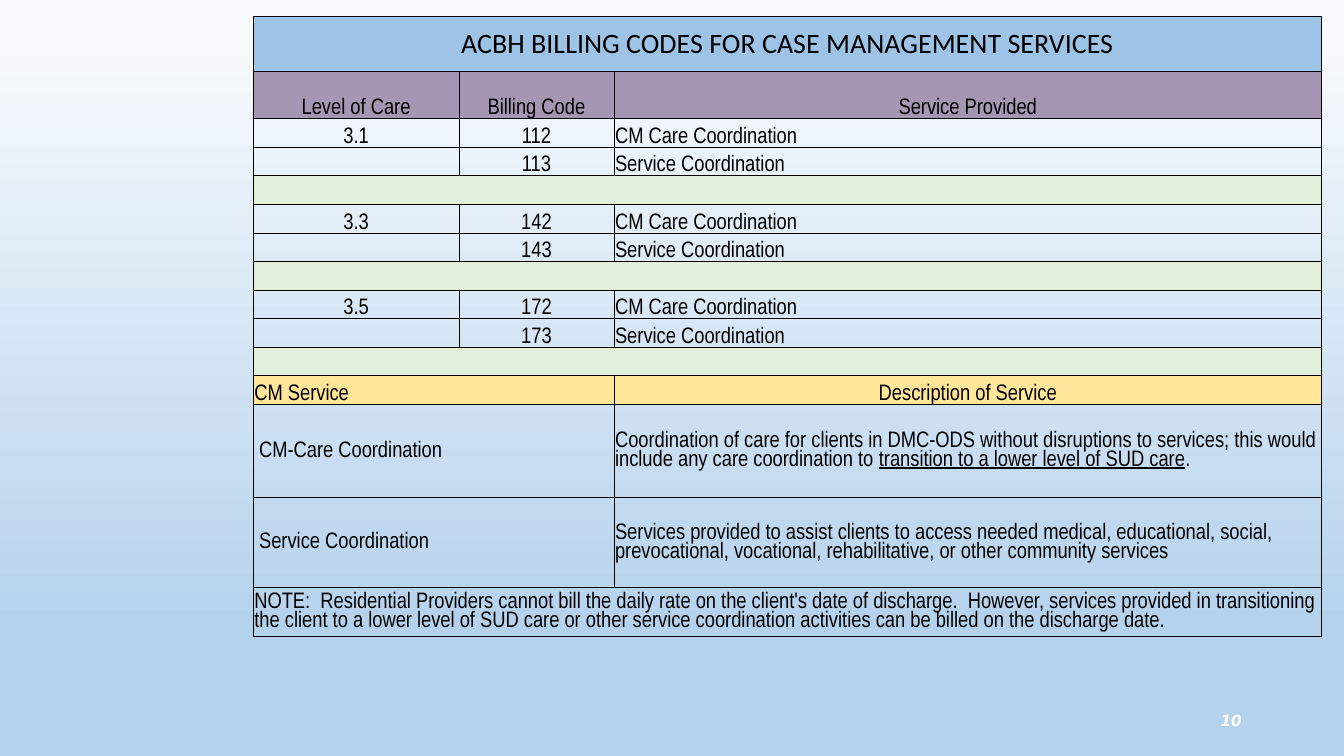
"""Build the slide of billing codes for case management services."""
from lxml.etree import SubElement
from pptx import Presentation
from pptx.dml.color import RGBColor
from pptx.enum.text import MSO_ANCHOR, PP_ALIGN
from pptx.oxml.ns import qn
from pptx.util import Cm, Pt

COLORS = {
    "black": "000000", "white": "FFFFFF", "title": "9DC3E6", "header": "A596B4",
    "spacer": "E2EFDA", "service": "FFE699",
    "sky_top": "F7FAFD", "sky_low": "B5D2EC", "sky_end": "CEE1F2",
}
BODY = {"name": "Arial Narrow", "size": Pt(16)}
TITLE = {"name": "Calibri", "size": Pt(20)}
NUMBER = {"name": "DejaVu Sans", "size": Pt(11), "bold": True, "italic": True}
CENTER, LEFT, RIGHT = PP_ALIGN.CENTER, PP_ALIGN.LEFT, PP_ALIGN.RIGHT
MIDDLE, BOTTOM = MSO_ANCHOR.MIDDLE, MSO_ANCHOR.BOTTOM
NO_GRID_STYLE = "{2D5ABB26-0587-4C30-8999-92F81FD0307C}"

COLUMN_WIDTHS = [5.19, 3.9, 4.5, 3.99, 9.35]
ROW_HEIGHTS = [1.4, 1.18] + [0.72] * 10 + [2.34, 2.27, 1.11]
THICK_LINES = {0, 1, 2, 11, 12, 14, 15}
LEVELS = [("3.1", "112", "113"), ("3.3", "142", "143"), ("3.5", "172", "173")]


def entry(text, span=1, align=LEFT, anchor=BOTTOM, fill=None, font=BODY, indent=0.03):
    """Describe one table cell."""
    runs = [text] if isinstance(text, str) else text
    return {"runs": runs, "span": span, "align": align, "anchor": anchor,
            "fill": fill, "font": font, "indent": indent}


def billing_rows():
    """Return the table's rows as lists of cell descriptions."""
    rows = [
        [entry("ACBH BILLING CODES FOR CASE MANAGEMENT SERVICES", 5, CENTER, MIDDLE,
               "title", TITLE)],
        [entry("Level of Care", 1, CENTER, fill="header"),
         entry("Billing Code", 1, CENTER, fill="header"),
         entry("Service Provided", 3, CENTER, fill="header")],
    ]
    for level, care_code, service_code in LEVELS:
        rows += [
            [entry(level, 1, CENTER), entry(care_code, 1, CENTER),
             entry("CM Care Coordination", 3)],
            [entry(""), entry(service_code, 1, CENTER), entry("Service Coordination", 3)],
            [entry("", fill="spacer") for _ in COLUMN_WIDTHS],
        ]
    return rows + [
        [entry("CM Service", fill="service"), entry("", fill="service"),
         entry("Description of Service", 3, CENTER, fill="service")],
        [entry("CM-Care Coordination", 2, anchor=MIDDLE, indent=0.15),
         entry(["Coordination of care for clients in DMC-ODS without disruptions to "
                "services; this would include any care coordination to ",
                "transition to a lower level of SUD care", "."], 3, anchor=MIDDLE)],
        [entry("Service Coordination", 2, anchor=MIDDLE, indent=0.15),
         entry("Services provided to assist clients to access needed medical, educational, "
               "social, prevocational, vocational, rehabilitative, or other community "
               "services", 3, anchor=MIDDLE)],
        [entry("NOTE:  Residential Providers cannot bill the daily rate on the client's date "
               "of discharge.  However, services provided in transitioning the client to a "
               "lower level of SUD care or other service coordination activities can be "
               "billed on the discharge date.", 5, anchor=MIDDLE)],
    ]


class SlideBuilder:
    """Hold the style and the current slide."""

    def __init__(self, presentation, colors):
        """Add a blank slide to the presentation."""
        self.colors = colors
        self.slide = presentation.slides.add_slide(presentation.slide_layouts[6])

    def color(self, name):
        """Return a named colour."""
        return RGBColor.from_string(self.colors[name])

    def background(self, stops):
        """Fill the background with a vertical gradient."""
        fill = self.slide.background.fill
        fill.gradient()
        fill.gradient_angle = 270
        stop_list = self.slide.background._cSld.find(".//" + qn("a:gsLst"))
        stop_list.clear()
        for percent, name in stops:
            stop = SubElement(stop_list, qn("a:gs"), pos=str(percent * 1000))
            SubElement(stop, qn("a:srgbClr"), val=self.colors[name])

    def run(self, paragraph, text, font, color):
        """Add a formatted run and return it."""
        run = paragraph.add_run()
        run.text = text
        for attribute, value in font.items():
            setattr(run.font, attribute, value)
        run.font.color.rgb = self.color(color)
        return run

    def text(self, text, box, font, color, align):
        """Add a one-line text box."""
        shape = self.slide.shapes.add_textbox(*map(Cm, box))
        frame = shape.text_frame
        frame.word_wrap = True
        frame.vertical_anchor = MIDDLE
        paragraph = frame.paragraphs[0]
        paragraph.alignment = align
        self.run(paragraph, text, font, color)

    def border(self, cell, side, points):
        """Draw one side of a cell."""
        line = SubElement(cell._tc.get_or_add_tcPr(), qn("a:ln" + side), w=str(Pt(points)))
        fill = SubElement(line, qn("a:solidFill"))
        SubElement(fill, qn("a:srgbClr"), val=self.colors["black"])

    def cell(self, cell, content):
        """Fill a cell with its text and colour."""
        formats = {"vertical_anchor": content["anchor"], "margin_left": Cm(content["indent"]),
                   "margin_right": Cm(0.03), "margin_top": Cm(0.03), "margin_bottom": 0}
        for attribute, value in formats.items():
            setattr(cell, attribute, value)
        paragraph = cell.text_frame.paragraphs[0]
        paragraph.alignment = content["align"]
        paragraph.line_spacing = 0.9
        for index, text in enumerate(content["runs"]):
            if text:
                run = self.run(paragraph, text, content["font"], "black")
                run.font.underline = index == 1
            else:
                SubElement(paragraph._p, qn("a:endParaRPr"), sz="1200")
        if content["fill"]:
            cell.fill.solid()
            cell.fill.fore_color.rgb = self.color(content["fill"])
        else:
            cell.fill.background()

    def table(self, left, top, widths, heights, rows, thick_lines):
        """Add a bordered table whose filled blank cells join the cell before them."""
        size = map(Cm, (left, top, sum(widths), sum(heights)))
        table = self.slide.shapes.add_table(len(heights), len(widths), *size).table
        table.first_row = table.horz_banding = False
        table._tbl.tblPr.find(qn("a:tableStyleId")).text = NO_GRID_STYLE
        for column, width in zip(table.columns, widths):
            column.width = Cm(width)
        for row, height in zip(table.rows, heights):
            row.height = Cm(height)
        for row, contents in enumerate(rows):
            joined = [index > 0 and content["fill"] and not content["runs"][0]
                      for index, content in enumerate(contents)] + [False]
            start = 0
            for index, content in enumerate(contents):
                end = start + content["span"]
                cell = table.cell(row, start)
                if content["span"] > 1:
                    cell.merge(table.cell(row, end - 1))
                if not joined[index]:
                    self.border(cell, "L", 0.5 if start else 1)
                if not joined[index + 1]:
                    self.border(cell, "R", 0.5 if end < len(widths) else 1)
                for side, line in (("T", row), ("B", row + 1)):
                    self.border(cell, side, 1 if line in thick_lines else 0.5)
                self.cell(cell, content)
                start = end


def main():
    """Build and save the presentation."""
    presentation = Presentation()
    presentation.slide_width = Cm(33.87)
    presentation.slide_height = Cm(19.05)
    builder = SlideBuilder(presentation, COLORS)
    builder.background([(5, "sky_top"), (83, "sky_low"), (100, "sky_low"), (100, "sky_end")])
    builder.text("10", (23.93, 17.65, 7.62, 1.02), NUMBER, "white", RIGHT)
    builder.table(6.38, 0.41, COLUMN_WIDTHS, ROW_HEIGHTS, billing_rows(), THICK_LINES)
    presentation.save("out.pptx")


if __name__ == "__main__":
    main()
